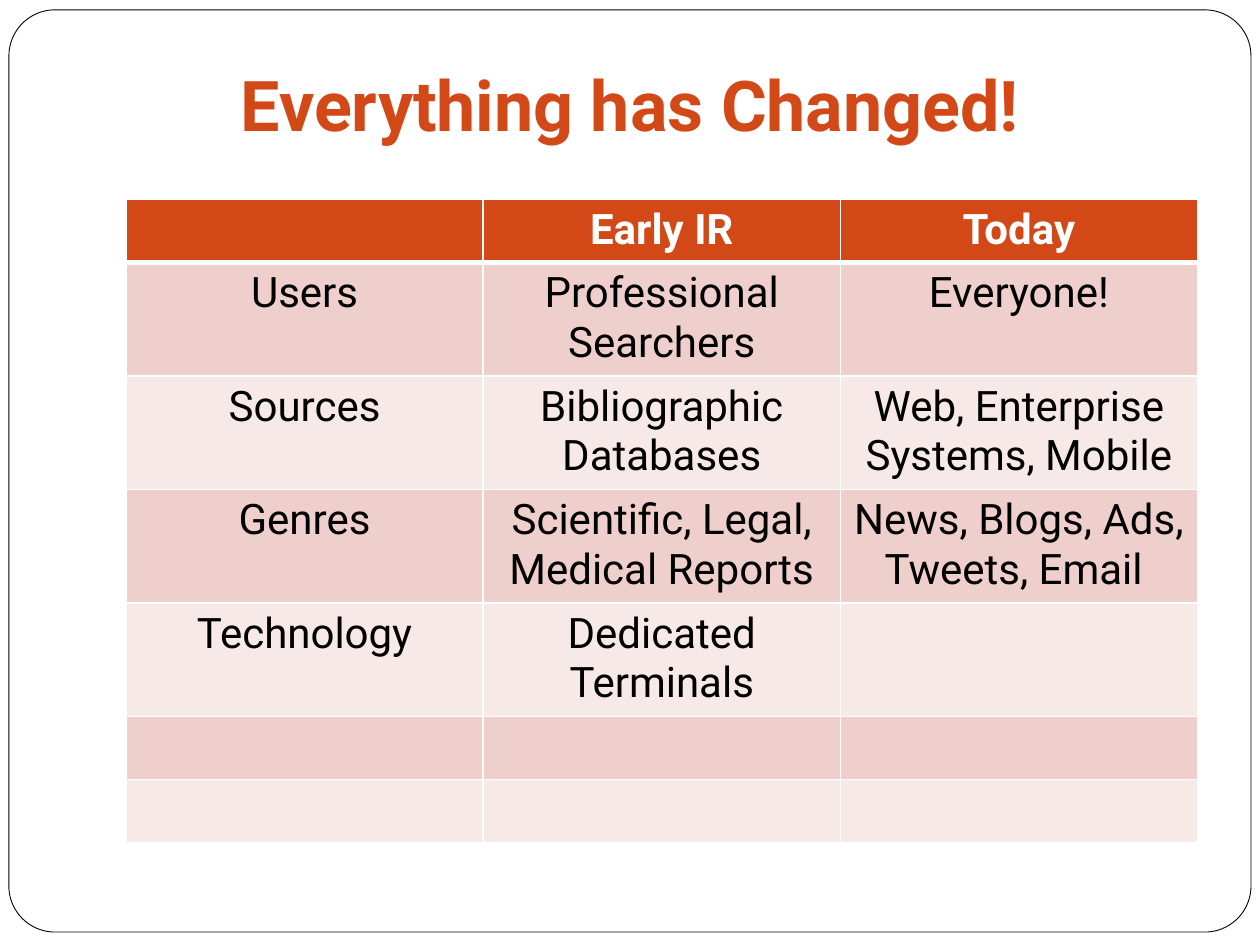
from lxml.etree import SubElement
from pptx import Presentation
from pptx.dml.color import RGBColor
from pptx.enum.shapes import MSO_SHAPE as Shape
from pptx.enum.text import MSO_ANCHOR as Anchor, PP_ALIGN as Align
from pptx.oxml.ns import qn
from pptx.util import Cm, Pt

FONT = "Roboto"
COLORS = {
    "accent": "D34817",
    "band_dark": "EFCFCC",
    "band_light": "F7E9E8",
    "paper": "FFFFFF",
    "ink": "000000",
}
COMPARISON = [
    ("", "Early IR", "Today"),
    ("Users", "Professional Searchers", "Everyone!"),
    ("Sources", "Bibliographic\nDatabases", "Web, Enterprise Systems, Mobile"),
    ("Genres", "Scientific, Legal, Medical Reports", "News, Blogs, Ads, Tweets, Email "),
    ("Technology", "Dedicated Terminals", ""),
    ("", "", ""),
    ("", "", ""),
]
SHORT_ROW, TALL_ROW = 1.24, 2.25


def color(name):
    return RGBColor.from_string(COLORS[name])


def write(frame, text, size, ink, bold):
    frame.text = text
    for paragraph in frame.paragraphs:
        paragraph.alignment = Align.CENTER
        font = paragraph.font
        font.name, font.size, font.bold = FONT, Pt(size), bold
        font.color.rgb = color(ink)


def add_frame(slide, left, top, width, height):
    frame = slide.shapes.add_shape(
        Shape.ROUNDED_RECTANGLE, Cm(left), Cm(top), Cm(width), Cm(height))
    frame.adjustments[0] = 0.05
    frame.shadow.inherit = False
    frame.fill.solid()
    frame.fill.fore_color.rgb = color("paper")
    frame.line.color.rgb = color("ink")
    frame.line.width = Pt(0.5)


def add_title(slide, left, top, width, height):
    title = slide.shapes.add_textbox(Cm(left), Cm(top), Cm(width), Cm(height)).text_frame
    title.word_wrap = True
    title.vertical_anchor = Anchor.BOTTOM
    title.margin_bottom = Cm(0.25)
    write(title, "Everything has Changed!", 40, "accent", True)


def set_borders(cell, top, bottom):
    properties = cell._tc.get_or_add_tcPr()
    widths = {"lnL": 1, "lnR": 1, "lnT": top, "lnB": bottom}
    for index, (side, width) in enumerate(widths.items()):
        border = SubElement(properties, qn(f"a:{side}"), w=str(Pt(width)))
        fill = SubElement(border, qn("a:solidFill"))
        SubElement(fill, qn("a:srgbClr"), val=COLORS["paper"])
        properties.insert(index, border)


def add_comparison(slide, left, top, width):
    heights = [TALL_ROW if row > 0 and any(texts) else SHORT_ROW
               for row, texts in enumerate(COMPARISON)]
    columns = len(COMPARISON[0])
    table = slide.shapes.add_table(
        len(COMPARISON), columns, Cm(left), Cm(top), Cm(width), Cm(sum(heights))).table
    for column in table.columns:
        column.width = Cm(width / columns)
    for row, texts in enumerate(COMPARISON):
        table.rows[row].height = Cm(heights[row])
        header = row == 0
        band = "accent" if header else "band_dark" if row % 2 else "band_light"
        for column, text in enumerate(texts):
            cell = table.cell(row, column)
            cell.fill.solid()
            cell.fill.fore_color.rgb = color(band)
            set_borders(cell, 3 if row == 1 else 1, 3 if header else 1)
            write(cell.text_frame, text, 24, "paper" if header else "ink", header)


def main():
    deck = Presentation()
    deck.slide_width, deck.slide_height = Cm(25.4), Cm(19.05)
    slide = deck.slides.add_slide(deck.slide_layouts[6])
    add_frame(slide, 0.18, 0.2, 25.04, 18.59)
    add_title(slide, 1.9, 0, 21.6, 3.18)
    add_comparison(slide, 2.54, 4.02, 21.6)
    deck.save("out.pptx")


if __name__ == "__main__":
    main()
